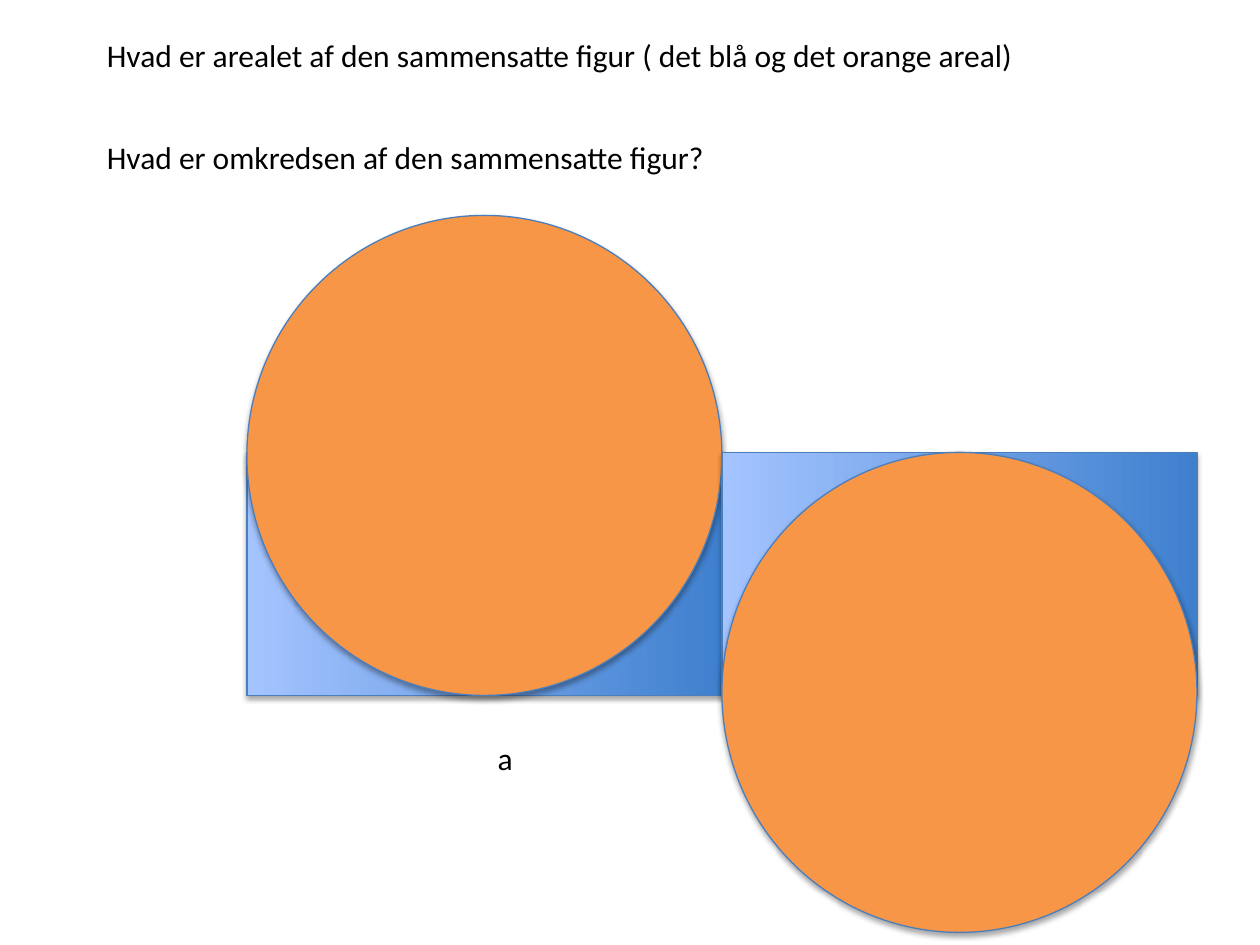
from lxml import etree
from pptx import Presentation
from pptx.dml.color import RGBColor
from pptx.enum.shapes import MSO_SHAPE
from pptx.enum.text import MSO_AUTO_SIZE
from pptx.oxml.ns import qn
from pptx.util import Inches, Pt

BLACK = RGBColor(0x00, 0x00, 0x00)
ORANGE = RGBColor(0xF7, 0x96, 0x46)
DARK_BLUE = RGBColor(0x3F, 0x80, 0xCE)
LIGHT_BLUE = RGBColor(0xA4, 0xC4, 0xFF)
OUTLINE = RGBColor(0x4B, 0x7E, 0xBC)

WIDTH, CIRCLE_HEIGHT, RECTANGLE_HEIGHT = 3.77, 3.81, 1.93
FIGURE_LEFT, RECTANGLE_TOP = 1.96, 3.59


def add_figure(kind, left, top, width, height):
    """Add a shape with the shared outline and soft shadow."""
    shape = slide.shapes.add_shape(
        kind, Inches(left), Inches(top), Inches(width), Inches(height))
    shape.line.color.rgb = OUTLINE
    shape.line.width = Pt(0.75)
    shape.shadow.inherit = False
    effects = shape._element.spPr.find(qn("a:effectLst"))
    shadow = etree.SubElement(
        effects, qn("a:outerShdw"), blurRad=str(Pt(3.1)), dist=str(Pt(1.8)),
        dir="5400000", rotWithShape="0")
    color = etree.SubElement(shadow, qn("a:srgbClr"), val=str(BLACK))
    etree.SubElement(color, qn("a:alpha"), val="35000")
    return shape


def add_text(text, left, top, width):
    """Add a single unwrapped line of text."""
    box = slide.shapes.add_textbox(
        Inches(left), Inches(top), Inches(width), Inches(0.4))
    box.text_frame.word_wrap = False
    box.text_frame.auto_size = MSO_AUTO_SIZE.SHAPE_TO_FIT_TEXT
    run = box.text_frame.paragraphs[0].add_run()
    run.text = text
    font_format = {"name": "Calibri", "size": Pt(18)}
    for attribute, value in font_format.items():
        setattr(run.font, attribute, value)
    run.font.color.rgb = BLACK


presentation = Presentation()
presentation.slide_width = Inches(10)
presentation.slide_height = Inches(7.5)
slide = presentation.slides.add_slide(presentation.slide_layouts[6])

# Rectangle and circle pairs, side by side
for index, circle_top in enumerate((1.71, RECTANGLE_TOP)):
    left = FIGURE_LEFT + index * WIDTH

    # The rectangle stands upright and is turned about its centre
    shift = (WIDTH - RECTANGLE_HEIGHT) / 2
    rectangle = add_figure(MSO_SHAPE.RECTANGLE, left + shift,
                           RECTANGLE_TOP - shift, RECTANGLE_HEIGHT, WIDTH)
    rectangle.rotation = 270
    rectangle.fill.gradient()
    rectangle.fill.gradient_angle = 90
    for stop, color, position in zip(rectangle.fill.gradient_stops,
                                     (DARK_BLUE, LIGHT_BLUE), (0, 1)):
        stop.color.rgb = color
        stop.position = position

    circle = add_figure(MSO_SHAPE.OVAL, left, circle_top, WIDTH, CIRCLE_HEIGHT)
    circle.fill.solid()
    circle.fill.fore_color.rgb = ORANGE

# Side label and questions
add_text("a", 3.85, 5.82, 0.32)
add_text("Hvad er arealet af den sammensatte figur ( det blå og det orange areal)",
         0.75, 0.24, 7.49)
add_text("Hvad er omkredsen af den sammensatte figur?", 0.75, 1.05, 5.01)

presentation.save("out.pptx")
